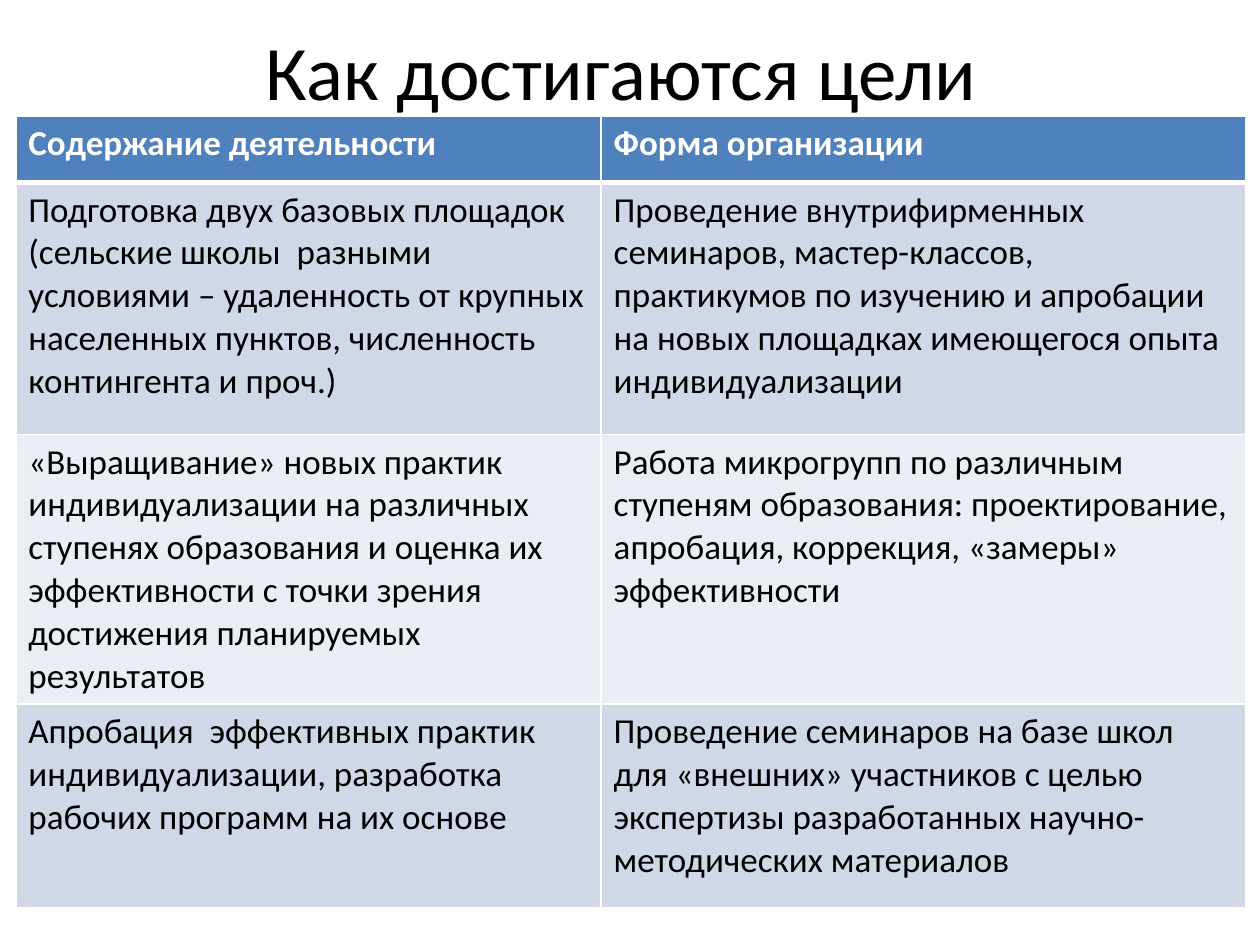
from dataclasses import dataclass

from lxml import etree
from pptx import Presentation
from pptx.dml.color import RGBColor
from pptx.enum.text import MSO_ANCHOR, PP_ALIGN
from pptx.oxml.ns import qn
from pptx.util import Pt

CENTER = PP_ALIGN.CENTER
LEFT = PP_ALIGN.LEFT
MIDDLE = MSO_ANCHOR.MIDDLE
TOP = MSO_ANCHOR.TOP

BLACK = RGBColor(0x00, 0x00, 0x00)
WHITE = RGBColor(0xFF, 0xFF, 0xFF)
HEADER_BLUE = RGBColor(0x4F, 0x81, 0xBD)
BAND_DARK = RGBColor(0xD0, 0xD8, 0xE8)
BAND_LIGHT = RGBColor(0xE9, 0xED, 0xF4)

FONT = "Calibri"
TITLE_FORMAT = {"name": FONT, "size": Pt(44), "bold": False}
HEADER_FORMAT = {"name": FONT, "size": Pt(20), "bold": True}
BODY_FORMAT = {"name": FONT, "size": Pt(20), "bold": False}
THIN, THICK = Pt(1), Pt(3)
COLUMN_WIDTHS = (Pt(334.5), Pt(368.5))


@dataclass(frozen=True)
class Row:
    height: int
    activity: str
    form: str


ROWS = (
    Row(Pt(38), "Содержание деятельности", "Форма организации"),
    Row(
        Pt(144),
        "Подготовка двух базовых площадок (сельские школы  разными условиями – "
        "удаленность от крупных населенных пунктов, численность контингента и проч.)",
        "Проведение внутрифирменных семинаров, мастер-классов, практикумов по "
        "изучению и апробации на новых площадках имеющегося опыта индивидуализации",
    ),
    Row(
        Pt(144),
        "«Выращивание» новых практик индивидуализации на различных ступенях "
        "образования и оценка их эффективности с точки зрения достижения "
        "планируемых результатов",
        "Работа микрогрупп по различным ступеням образования: проектирование, "
        "апробация, коррекция, «замеры» эффективности",
    ),
    Row(
        Pt(116.5),
        "Апробация  эффективных практик индивидуализации, разработка рабочих "
        "программ на их основе",
        "Проведение семинаров на базе школ для «внешних» участников с целью "
        "экспертизы разработанных научно-методических материалов",
    ),
)


def write_text(frame, text: str, formats: dict, color: RGBColor, align) -> None:
    para = frame.paragraphs[0]
    para.alignment = align
    span = para.add_run()
    span.text = text
    for name, value in formats.items():
        setattr(span.font, name, value)
    span.font.color.rgb = color


def draw_borders(cell, top: int, bottom: int) -> None:
    properties = cell._tc.get_or_add_tcPr()
    widths = {"a:lnL": THIN, "a:lnR": THIN, "a:lnT": top, "a:lnB": bottom}
    for tag, width in widths.items():
        line = etree.SubElement(properties, qn(tag), w=str(int(width)))
        fill = etree.SubElement(line, qn("a:solidFill"))
        etree.SubElement(fill, qn("a:srgbClr"), val=str(WHITE))


def draw_row(table, index: int, row: Row) -> None:
    is_header = index == 0
    band = BAND_DARK if index % 2 else BAND_LIGHT
    table.rows[index].height = row.height
    for column, text in enumerate((row.activity, row.form)):
        cell = table.cell(index, column)
        draw_borders(cell, THICK if index == 1 else THIN, THICK if is_header else THIN)
        cell.fill.solid()
        cell.fill.fore_color.rgb = HEADER_BLUE if is_header else band
        cell.vertical_anchor = TOP
        write_text(
            cell.text_frame,
            text,
            HEADER_FORMAT if is_header else BODY_FORMAT,
            WHITE if is_header else BLACK,
            LEFT,
        )


def draw_title(page, text: str) -> None:
    title = page.shapes.title
    place = {"left": Pt(31), "top": Pt(9.5), "width": Pt(648), "height": Pt(61)}
    for name, value in place.items():
        setattr(title, name, value)
    title.text_frame.vertical_anchor = MIDDLE
    write_text(title.text_frame, text, TITLE_FORMAT, BLACK, CENTER)


def draw_table(page) -> None:
    table = page.shapes.add_table(
        len(ROWS), len(COLUMN_WIDTHS), Pt(9), Pt(66.25),
        sum(COLUMN_WIDTHS), sum(row.height for row in ROWS),
    ).table
    for column, width in zip(table.columns, COLUMN_WIDTHS):
        column.width = width
    for index, row in enumerate(ROWS):
        draw_row(table, index, row)


def main() -> None:
    deck = Presentation()
    deck.slide_width, deck.slide_height = Pt(720), Pt(540)
    page = deck.slides.add_slide(deck.slide_layouts[5])
    draw_title(page, "Как достигаются цели")
    draw_table(page)
    deck.save("out.pptx")


if __name__ == "__main__":
    main()
